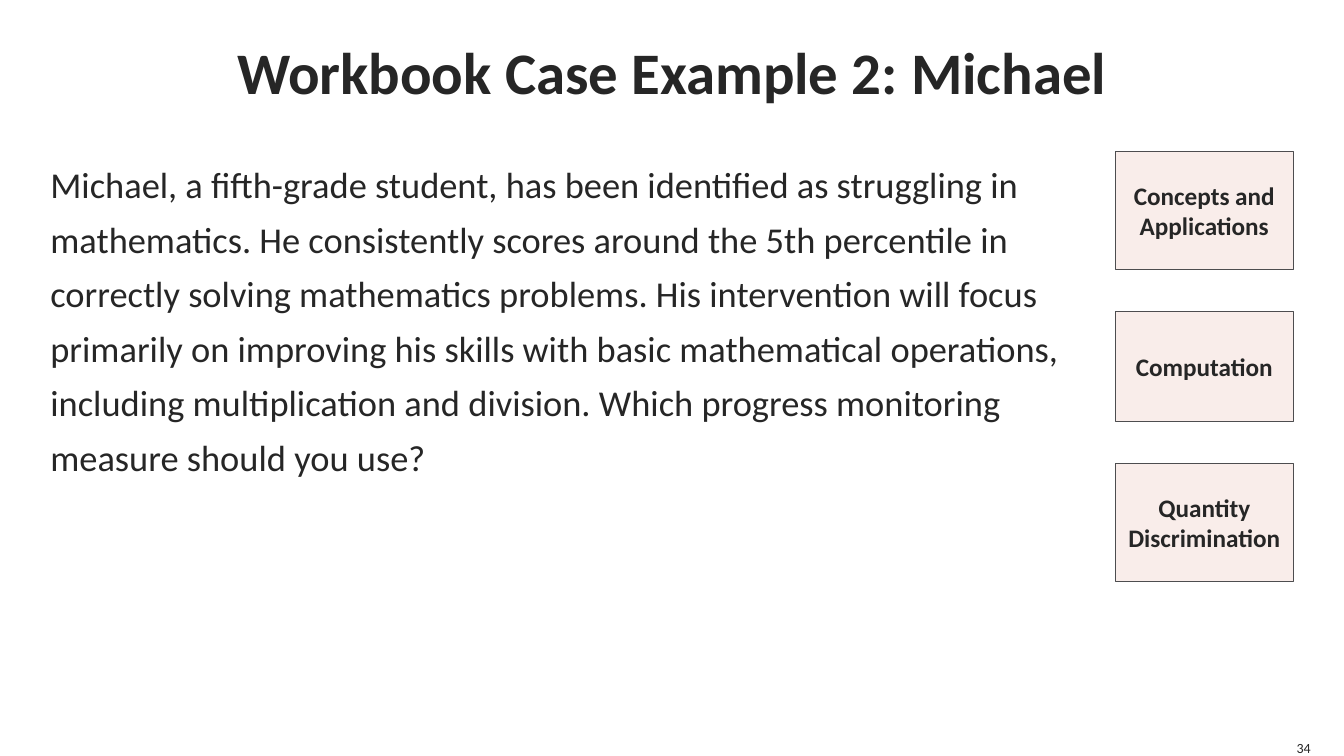
from pptx import Presentation
from pptx.dml.color import RGBColor
from pptx.enum.shapes import MSO_SHAPE
from pptx.enum.text import MSO_ANCHOR as ANCHOR, MSO_AUTO_SIZE as AUTO, PP_ALIGN as ALIGN
from pptx.util import Inches, Pt

# Content
TITLE = "Workbook Case Example 2: Michael"
CASE = (
    "Michael, a fifth-grade student, has been identified as struggling in "
    "mathematics. He consistently scores around the 5th percentile in "
    "correctly solving mathematics problems. His intervention will focus "
    "primarily on improving his skills with basic mathematical operations, "
    "including multiplication and division. Which progress monitoring "
    "measure should you use?"
)
MEASURES = [  # label, height
    ("Concepts and Applications", 1.17),
    ("Computation", 1.09),
    ("Quantity Discrimination", 1.17),
]
PAGE = "34"

# Layout and colours
MARGIN, CONTENT_TOP = 0.5, 1.5
MEASURE_LEFT, MEASURE_WIDTH, MEASURE_GAP = 11.06, 1.77, 0.42
INK, TINT, EDGE = "262626", "F9EDEA", "4D4D4F"


def color(hex_string):
    return RGBColor.from_string(hex_string)


def write(shape, text, size, bold=False, align=ALIGN.LEFT, anchor=ANCHOR.TOP,
          inset=0, wrap=True, auto=AUTO.NONE):
    frame = shape.text_frame
    frame.text = text
    inset = Inches(inset)
    frame_format = {
        "margin_left": inset, "margin_right": inset,
        "margin_top": inset, "margin_bottom": inset,
        "vertical_anchor": anchor, "word_wrap": wrap, "auto_size": auto,
    }
    for name, value in frame_format.items():
        setattr(frame, name, value)
    paragraph = frame.paragraphs[0]
    paragraph.alignment = align
    font = paragraph.runs[0].font
    for name, value in {"name": "Calibri", "size": Pt(size), "bold": bold}.items():
        setattr(font, name, value)
    font.color.rgb = color(INK)
    return paragraph


def box(left, top, width, height):
    return [Inches(v) for v in (left, top, width, height)]


prs = Presentation()
prs.slide_width, prs.slide_height = Inches(13.33), Inches(7.5)
slide = prs.slides.add_slide(prs.slide_layouts[5])
shapes = slide.shapes

# Title
title = shapes.title
title.left, title.top, title.width, title.height = box(MARGIN, 0, 12.33, 1.4)
write(title, TITLE, 42, bold=True, align=ALIGN.CENTER, anchor=ANCHOR.MIDDLE)

# Case description
case = shapes.add_textbox(*box(MARGIN, CONTENT_TOP, 10.33, 4.57))
write(case, CASE, 26).line_spacing = 1.25

# Column of measures to choose from
top = CONTENT_TOP
for label, height in MEASURES:
    measure = shapes.add_shape(
        MSO_SHAPE.RECTANGLE, *box(MEASURE_LEFT, top, MEASURE_WIDTH, height))
    measure.shadow.inherit = False
    measure.fill.solid()
    measure.fill.fore_color.rgb = color(TINT)
    measure.line.color.rgb = color(EDGE)
    measure.line.width = Pt(0.75)
    write(measure, label, 18, bold=True, align=ALIGN.CENTER,
          anchor=ANCHOR.MIDDLE, inset=0.1)
    top += height + MEASURE_GAP

# Page number
page = shapes.add_textbox(*box(12.83, 7.33, 0.17, 0.17))
write(page, PAGE, 10, align=ALIGN.RIGHT, anchor=ANCHOR.BOTTOM,
      wrap=False, auto=AUTO.SHAPE_TO_FIT_TEXT)

prs.save("out.pptx")
